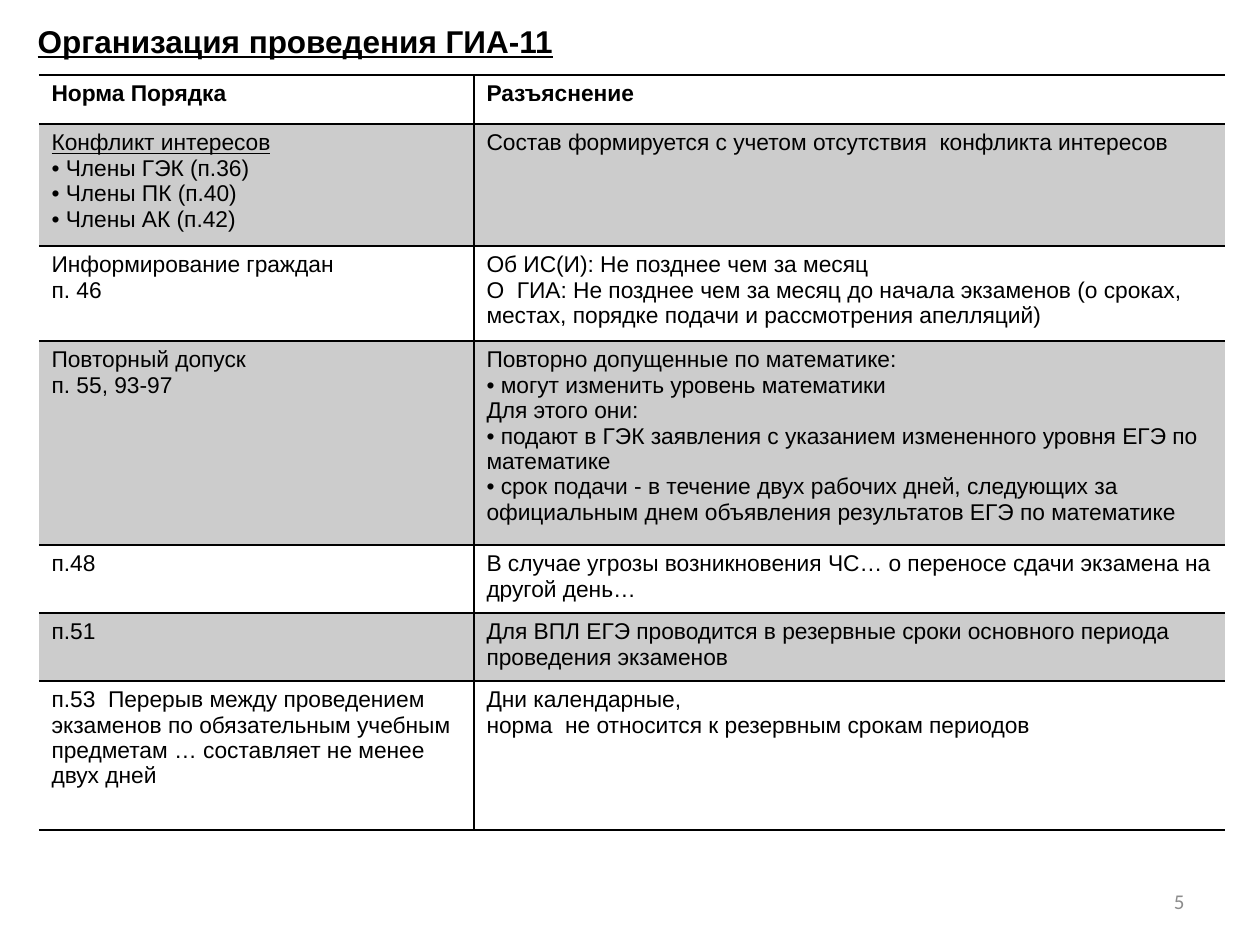
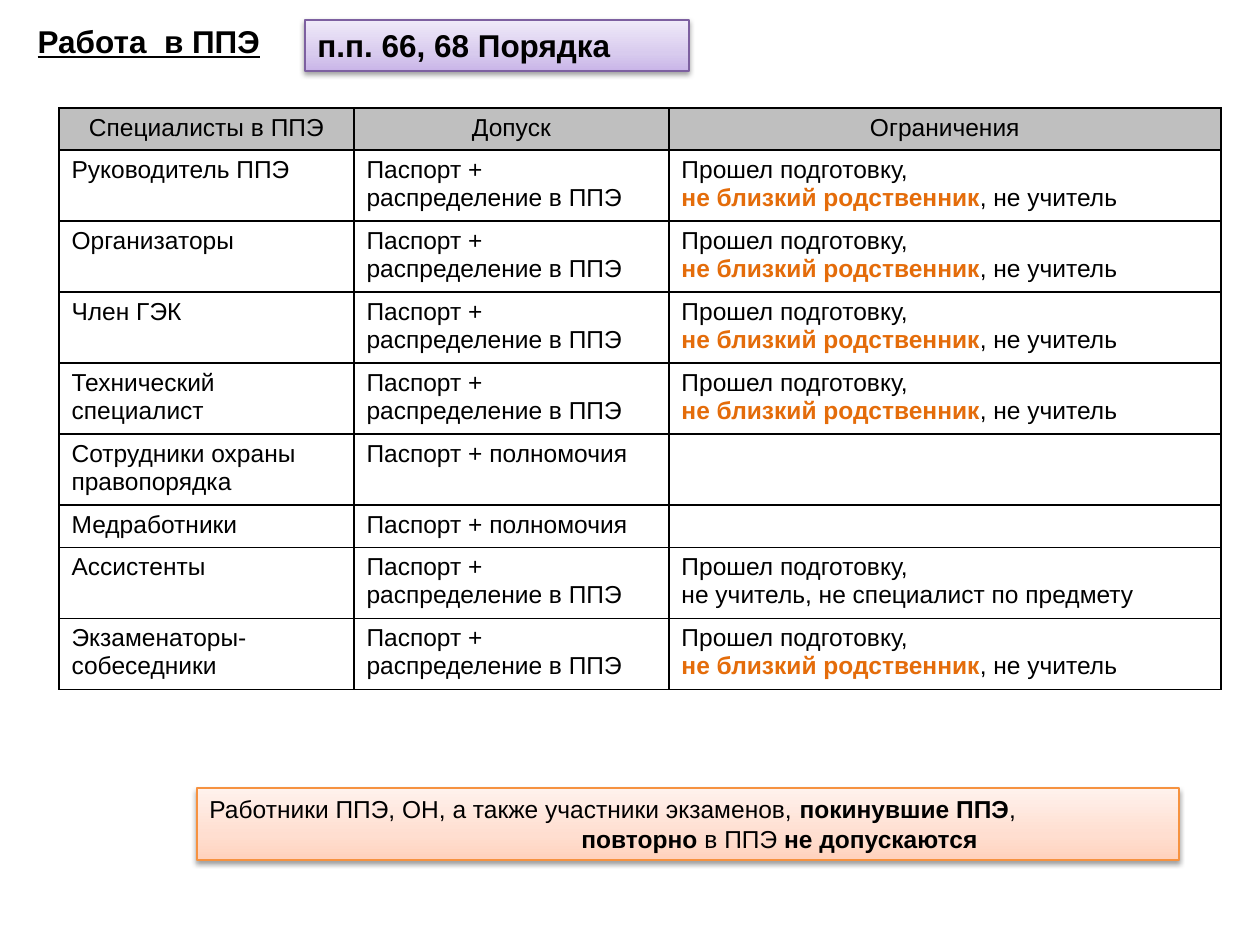
import copy

from lxml import etree
from pptx import Presentation
from pptx import util as u
from pptx.dml.color import RGBColor
from pptx.enum import shapes, text
from pptx.oxml.ns import qn

PX = u.Inches(1) // 126
FONT = "Arial"
BLACK, WHITE, ORANGE = "000000", "FFFFFF", "E46C0A"
PAGE_NUMBER_GREY, HEADER_GREY, BAND_GREY = "8C8C8C", "BFBFBF", "CCCCCC"
LILAC = ("C9B5E8", "D8CBEE", "F0EAF9")
PEACH = ("FFD2BD", "FFDED0", "FFF2ED")
LEFT, CENTRE, RIGHT = text.PP_ALIGN.LEFT, text.PP_ALIGN.CENTER, text.PP_ALIGN.RIGHT

RULES = [
    ("Норма Порядка", "Разъяснение"),
    ("*Конфликт интересов*\n• Члены ГЭК (п.36)\n• Члены ПК (п.40)\n• Члены АК (п.42)",
     "Состав формируется с учетом отсутствия  конфликта интересов"),
    ("Информирование граждан\nп. 46",
     "Об ИС(И): Не позднее чем за месяц\n"
     "О  ГИА: Не позднее чем за месяц до начала экзаменов (о сроках, местах, "
     "порядке подачи и рассмотрения апелляций)"),
    ("Повторный допуск\nп. 55, 93-97",
     "Повторно допущенные по математике:\n"
     "• могут изменить уровень математики\n"
     "Для этого они:\n"
     "• подают в ГЭК заявления с указанием измененного уровня ЕГЭ по математике\n"
     "• срок подачи - в течение двух рабочих дней, следующих за официальным днем "
     "объявления результатов ЕГЭ по математике"),
    ("п.48", "В случае угрозы возникновения ЧС… о переносе сдачи экзамена на другой день…"),
    ("п.51", "Для ВПЛ ЕГЭ проводится в резервные сроки основного периода проведения экзаменов"),
    ("п.53  Перерыв между проведением экзаменов по обязательным учебным предметам "
     "… составляет не менее двух дней",
     "Дни календарные,\nнорма  не относится к резервным срокам периодов"),
]

ASSIGNED = "Паспорт + распределение в ППЭ"
AUTHORISED = "Паспорт + полномочия"
NOT_RELATIVE = "Прошел подготовку,\n*не близкий родственник*, не учитель"
STAFF = [
    ("Специалисты в ППЭ", "Допуск", "Ограничения"),
    ("Руководитель ППЭ", ASSIGNED, NOT_RELATIVE),
    ("Организаторы", ASSIGNED, NOT_RELATIVE),
    ("Член ГЭК", ASSIGNED, NOT_RELATIVE),
    ("Технический специалист", ASSIGNED, NOT_RELATIVE),
    ("Сотрудники охраны правопорядка", AUTHORISED, ""),
    ("Медработники", AUTHORISED, ""),
    ("Ассистенты", ASSIGNED, "Прошел подготовку,\nне учитель, не специалист по предмету"),
    ("Экзаменаторы-собеседники", ASSIGNED, NOT_RELATIVE),
]


def rgb(colour):
    return RGBColor.from_string(colour)


def px(*lengths):
    return [length * PX for length in lengths]


def style(font, size, name=FONT, colour=BLACK, bold=False, underline=False):
    font.size, font.name = u.Pt(size), name
    font.color.rgb = rgb(colour)
    font.bold, font.underline = bold, underline


def write(frame, content, align=LEFT, emphasis=None, **font):
    """Write one paragraph a line; parts between asterisks take the emphasis."""
    frame.word_wrap = True
    for index, line in enumerate(content.split("\n")):
        para = frame.paragraphs[0] if index == 0 else frame.add_paragraph()
        para.alignment = align
        for part_index, part in enumerate(line.split("*")):
            if part:
                span = para.add_run()
                span.text = part
                style(span.font, **{**font, **(emphasis if part_index % 2 else {})})
        if not line:
            etree.SubElement(para._p, qn("a:endParaRPr"), sz=str(font["size"] * 100))


def add_page(deck, title, width):
    page = deck.slides.add_slide(deck.slide_layouts[5])
    box = page.shapes.title
    box.left, box.top, box.width, box.height = px(25, 16, width, 51)
    box.text_frame.auto_size = text.MSO_AUTO_SIZE.NONE
    box.text_frame.vertical_anchor = text.MSO_ANCHOR.TOP
    write(box.text_frame, title, size=18, bold=True, underline=True)
    return page


def set_borders(cell, sides):
    """Draw the named sides (L, R, T, B) in black and clear the others."""
    properties = cell._tc.get_or_add_tcPr()
    for side in "LRTB":
        line = etree.SubElement(properties, qn(f"a:ln{side}"), w=str(u.Pt(1)))
        if side in sides:
            paint = etree.SubElement(line, qn("a:solidFill"))
            etree.SubElement(paint, qn("a:srgbClr"), val=BLACK)
        else:
            etree.SubElement(line, qn("a:noFill"))


def add_grid(page, rows, left, top, widths, heights, fill, header, outer=True, **font):
    """Add a table; fill gives a row's colour, header the format of the first row."""
    frame = page.shapes.add_table(len(rows), len(widths),
                                  *px(left, top, sum(widths), sum(heights)))
    table = frame.table
    for column, width in zip(table.columns, widths):
        column.width = width * PX
    for row_index, (row, height) in enumerate(zip(rows, heights)):
        table.rows[row_index].height = height * PX
        row_format = {**font, **header} if row_index == 0 else font
        for column_index, content in enumerate(row):
            cell = table.cell(row_index, column_index)
            sides = "TB"
            if outer or column_index > 0:
                sides += "L"
            if outer or column_index < len(row) - 1:
                sides += "R"
            set_borders(cell, sides)
            cell.fill.solid()
            cell.fill.fore_color.rgb = rgb(fill(row_index))
            write(cell.text_frame, content, **row_format)


def add_shadow(shape):
    shape.shadow.inherit = False
    effects = shape._element.spPr.find(qn("a:effectLst"))
    shadow = etree.SubElement(effects, qn("a:outerShdw"), blurRad=str(u.Pt(3.1)),
                              dist=str(u.Pt(1.6)), dir="5400000", rotWithShape="0")
    colour = etree.SubElement(shadow, qn("a:srgbClr"), val=BLACK)
    etree.SubElement(colour, qn("a:alpha"), val="38000")


def add_callout(page, content, place, colours, line, **font):
    """Add a shadowed box shaded upwards through three colours."""
    box = page.shapes.add_shape(shapes.MSO_SHAPE.RECTANGLE, *px(*place))
    box.fill.gradient()
    box.fill.gradient_angle = 90
    stops = box._element.spPr.find(".//" + qn("a:gsLst"))
    stops.append(copy.deepcopy(stops[0]))
    for stop, position, colour in zip(box.fill.gradient_stops, (0, 0.35, 1), colours):
        stop.position = position
        stop.color.rgb = rgb(colour)
    box.line.color.rgb = rgb(line)
    box.line.width = u.Pt(0.75)
    add_shadow(box)
    box.text_frame.vertical_anchor = text.MSO_ANCHOR.TOP
    write(box.text_frame, content, **font)
    return box


def add_page_number(page, number):
    box = page.shapes.add_textbox(*px(903, 876, 294, 50))
    box.text_frame.vertical_anchor = text.MSO_ANCHOR.MIDDLE
    write(box.text_frame, number, align=RIGHT, size=12, name="Calibri", colour=PAGE_NUMBER_GREY)


def build_rules_page(deck):
    page = add_page(deck, "Организация проведения ГИА-11", 595)
    add_grid(page, RULES, 39, 75, (435, 751), (49, 122, 95, 204, 68, 68, 149),
             fill=lambda row: BAND_GREY if row % 2 else WHITE, header={"bold": True},
             outer=False, size=13, emphasis={"underline": True})
    add_page_number(page, "5")


def build_staff_page(deck):
    page = add_page(deck, "Работа  в ППЭ", 260)
    add_callout(page, "п.п. 66, 68 Порядка", (305, 20, 384, 51), LILAC, "7D60A0",
                size=18, bold=True)
    single, double = 42, 71
    heights = [single if row in (0, 6) else double for row in range(len(STAFF))]
    add_grid(page, STAFF, 59, 108, (295, 315, 552), heights,
             fill=lambda row: WHITE if row else HEADER_GREY, header={"align": CENTRE},
             size=14, emphasis={"bold": True, "colour": ORANGE})
    note = add_callout(page, "Работники ППЭ, ОН, а также участники экзаменов, *покинувшие ППЭ*,\n"
                             "*повторно* в ППЭ *не допускаются*",
                       (197, 788, 982, 72), PEACH, "F69240", size=14, emphasis={"bold": True})
    second_line = note.text_frame.paragraphs[1]
    second_line._p.get_or_add_pPr().set("marL", str(372 * PX))


def main():
    deck = Presentation()
    deck.slide_width, deck.slide_height = px(1260, 945)
    build_rules_page(deck)
    build_staff_page(deck)
    deck.save("out.pptx")


if __name__ == "__main__":
    main()
